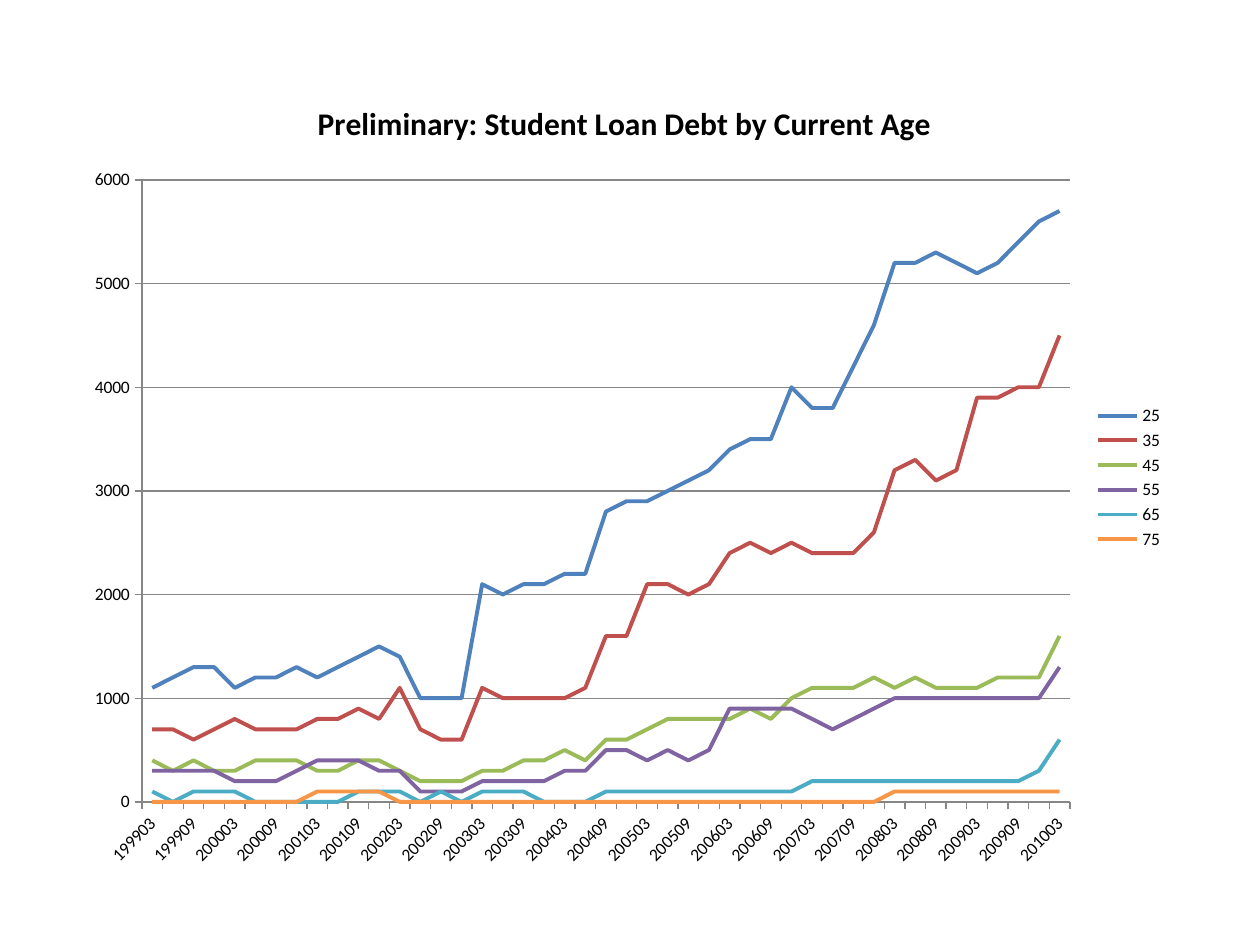
from lxml import etree
from pptx import Presentation
from pptx.chart.data import CategoryChartData
from pptx.dml.color import RGBColor
from pptx.enum.chart import XL_CHART_TYPE as ChartType, XL_LEGEND_POSITION as LegendPos
from pptx.enum.chart import XL_TICK_MARK as TickMark
from pptx.oxml.ns import qn
from pptx.util import Emu, Pt

PX = 914400 / 126
COLORS = {
    "25": "4F81BD", "35": "C0504D", "45": "9BBB59",
    "55": "8064A2", "65": "4BACC6", "75": "F79646",
    "text": "000000", "axis": "868686",
}
DEBT_IN_HUNDREDS = {
    "25": [11, 12, 13, 13, 11, 12, 12, 13, 12, 13, 14, 15, 14, 10, 10, 10,
           21, 20, 21, 21, 22, 22, 28, 29, 29, 30, 31, 32, 34, 35, 35, 40,
           38, 38, 42, 46, 52, 52, 53, 52, 51, 52, 54, 56, 57],
    "35": [7, 7, 6, 7, 8, 7, 7, 7, 8, 8, 9, 8, 11, 7, 6, 6,
           11, 10, 10, 10, 10, 11, 16, 16, 21, 21, 20, 21, 24, 25, 24, 25,
           24, 24, 24, 26, 32, 33, 31, 32, 39, 39, 40, 40, 45],
    "45": [4, 3, 4, 3, 3, 4, 4, 4, 3, 3, 4, 4, 3, 2, 2, 2,
           3, 3, 4, 4, 5, 4, 6, 6, 7, 8, 8, 8, 8, 9, 8, 10,
           11, 11, 11, 12, 11, 12, 11, 11, 11, 12, 12, 12, 16],
    "55": [3, 3, 3, 3, 2, 2, 2, 3, 4, 4, 4, 3, 3, 1, 1, 1,
           2, 2, 2, 2, 3, 3, 5, 5, 4, 5, 4, 5, 9, 9, 9, 9,
           8, 7, 8, 9, 10, 10, 10, 10, 10, 10, 10, 10, 13],
    "65": [1, 0, 1, 1, 1, 0, 0, 0, 0, 0, 1, 1, 1, 0, 1, 0,
           1, 1, 1, 0, 0, 0, 1, 1, 1, 1, 1, 1, 1, 1, 1, 1,
           2, 2, 2, 2, 2, 2, 2, 2, 2, 2, 2, 3, 6],
    "75": [0] * 8 + [1] * 4 + [0] * 24 + [1] * 9,
}


def px(length):
    return Emu(round(length * PX))


def style_line(line, color, width):
    line.color.rgb = RGBColor.from_string(COLORS[color])
    line.width = Pt(width)


prs = Presentation()
prs.slide_width, prs.slide_height = px(1260), px(945)
slide = prs.slides.add_slide(prs.slide_layouts[6])

quarters = [f"{year}{month:02d}" for year in range(1999, 2011) for month in (3, 6, 9, 12)]
debt = CategoryChartData(number_format="General")
debt.categories = quarters[:45]
for age, hundreds in DEBT_IN_HUNDREDS.items():
    debt.add_series(age, [value * 100 for value in hundreds])

chart = slide.shapes.add_chart(ChartType.LINE, px(73), px(73), px(1103), px(809), debt).chart
chart.font.name = "Calibri"
chart.font.size = Pt(10)
chart.font.color.rgb = RGBColor.from_string(COLORS["text"])

chart.has_title = True
heading = chart.chart_title.text_frame
heading.text = "Preliminary: Student Loan Debt by Current Age"
heading_font = heading.paragraphs[0].runs[0].font
heading_font.name = "Calibri"
heading_font.size = Pt(18)
heading_font.bold = True
heading_font.color.rgb = RGBColor.from_string(COLORS["text"])
chart.element.find(f".//{qn('c:title')}/{qn('c:overlay')}").set("val", "1")

chart.has_legend = True
chart.legend.position = LegendPos.RIGHT
chart.legend.include_in_layout = False

for trend in chart.plots[0].series:
    trend.smooth = False
    style_line(trend.format.line, trend.name, 2.25)
chart.plots[0].vary_by_categories = False

quarter_axis, debt_axis = chart.category_axis, chart.value_axis
for axis in (quarter_axis, debt_axis):
    axis.major_tick_mark = TickMark.OUTSIDE
    axis.minor_tick_mark = TickMark.NONE
    axis.tick_labels.font.size = Pt(10)
    style_line(axis.format.line, "axis", 0.75)
debt_axis.minimum_scale, debt_axis.maximum_scale, debt_axis.major_unit = 0, 6000, 1000
debt_axis.has_major_gridlines = True
style_line(debt_axis.major_gridlines.format.line, "axis", 0.75)

quarter_xml = quarter_axis._element
quarter_xml.find(f"{qn('c:txPr')}/{qn('a:bodyPr')}").set("rot", "-2700000")
label_skip = etree.Element(qn("c:tickLblSkip"), val="2")
quarter_xml.find(qn("c:noMultiLvlLbl")).addprevious(label_skip)

plot_area = chart.element.find(f".//{qn('c:plotArea')}")
for old_layout in plot_area.findall(qn("c:layout")):
    plot_area.remove(old_layout)
layout = etree.Element(qn("c:layout"))
manual = etree.SubElement(layout, qn("c:manualLayout"))
for tag, value in (("layoutTarget", "inner"), ("xMode", "edge"), ("yMode", "edge"),
                   ("x", 69 / 1103), ("y", 107 / 809), ("w", 928 / 1103), ("h", 622 / 809)):
    etree.SubElement(manual, qn(f"c:{tag}"), val=str(value))
plot_area.insert(0, layout)

prs.save("out.pptx")
